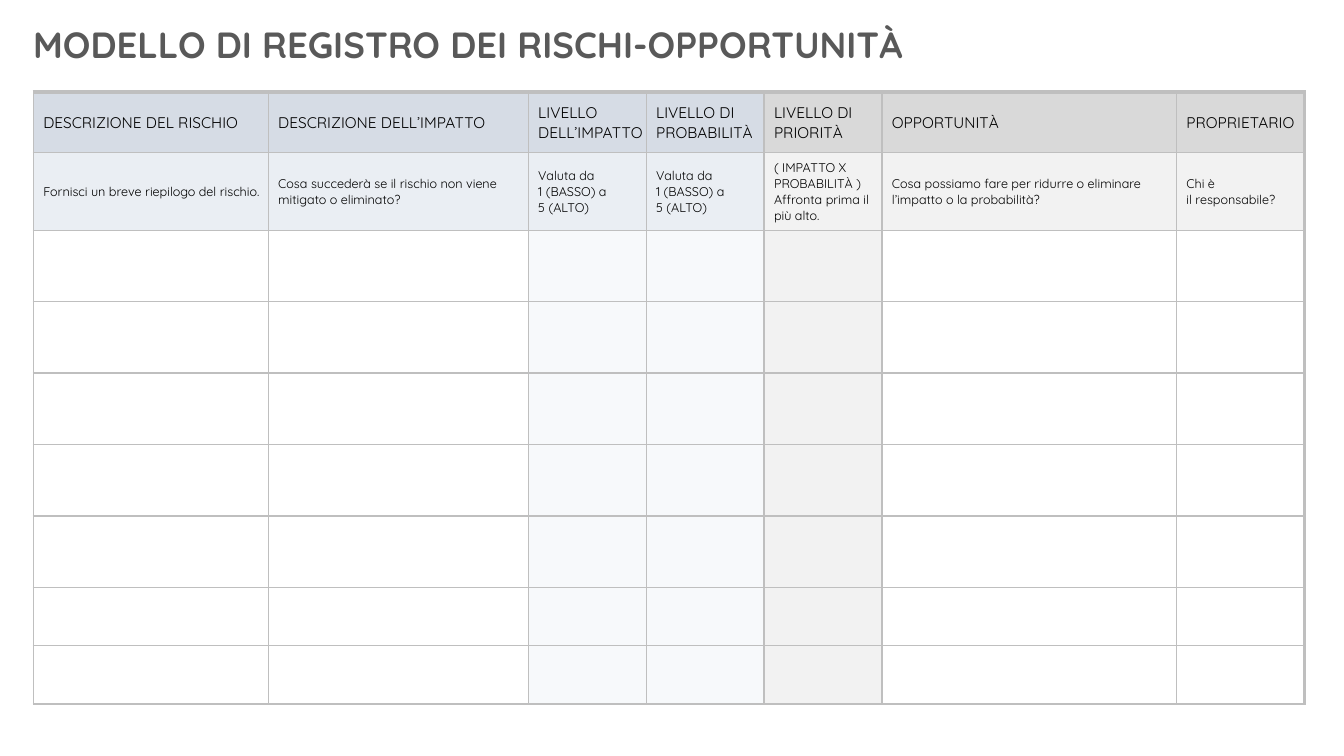
from dataclasses import dataclass

from lxml import etree
from pptx import Presentation
from pptx.dml.color import RGBColor
from pptx.enum.text import MSO_ANCHOR, MSO_AUTO_SIZE, PP_ALIGN
from pptx.oxml.ns import qn
from pptx.util import Cm, Pt

LEFT = PP_ALIGN.LEFT
TOP = MSO_ANCHOR.TOP
MIDDLE = MSO_ANCHOR.MIDDLE
NO_FIT = MSO_AUTO_SIZE.NONE
TITLE_ONLY = 5


@dataclass(frozen=True)
class Theme:
    font: str = "Quicksand"
    title_size: float = 26
    header_size: float = 11
    hint_size: float = 9
    title: str = "595959"
    text: str = "000000"
    border: str = "BFBFBF"
    risk: tuple = ("D6DCE5", "EAEEF3", "FFFFFF")
    score: tuple = ("D6DCE5", "EAEEF3", "F7F9FB")
    priority: tuple = ("D9D9D9", "F2F2F2", "F2F2F2")
    response: tuple = ("D9D9D9", "F2F2F2", "FFFFFF")
    thin: float = 1
    edge: float = 2.25
    top_edge: float = 3


THEME = Theme()

# Boxes in centimetres: left, top, width, height
TITLE_BOX = (0.58, 0.43, 31.7, 1.37)
TABLE_BOX = (0.84, 2.32, 32.03, 15.42)

# Columns: width, (header, hint), fills for header, hint and entry rows
RATING = "Valuta da\v1 (BASSO) a\v5 (ALTO)"
COLUMNS = [
    (5.92, ("DESCRIZIONE DEL RISCHIO",
            "Fornisci un breve riepilogo del rischio."), THEME.risk),
    (6.55, ("DESCRIZIONE DELL’IMPATTO",
            "Cosa succederà se il rischio non viene mitigato o eliminato?"), THEME.risk),
    (2.97, ("LIVELLO\vDELL’IMPATTO", RATING), THEME.score),
    (2.97, ("LIVELLO DI PROBABILITÀ", RATING), THEME.score),
    (2.97, ("LIVELLO DI PRIORITÀ",
            "( IMPATTO X\vPROBABILITÀ )\vAffronta prima il più alto."), THEME.priority),
    (7.42, ("OPPORTUNITÀ",
            "Cosa possiamo fare per ridurre o eliminare l’impatto o la probabilità?"),
     THEME.response),
    (3.23, ("PROPRIETARIO", "Chi è\nil responsabile?"), THEME.response),
]
ROW_HEIGHTS = [1.52, 1.96] + [1.8] * 5 + [1.47] * 2

CELL_FORMAT = {
    "vertical_anchor": MIDDLE,
    "margin_left": Cm(0.25),
    "margin_top": Cm(0.03),
    "margin_right": Cm(0.03),
    "margin_bottom": 0,
}
TITLE_FORMAT = {"word_wrap": True, "auto_size": NO_FIT, "vertical_anchor": TOP}


def apply_format(target, values):
    for name, value in values.items():
        setattr(target, name, value)


def style_text(text_frame, size, color, bold=False):
    for paragraph in text_frame.paragraphs:
        paragraph.alignment = LEFT
        for run in paragraph.runs:
            apply_format(run.font, {"name": THEME.font, "size": Pt(size), "bold": bold})
            run.font.color.rgb = RGBColor.from_string(color)


def set_borders(cell, widths):
    properties = cell._tc.get_or_add_tcPr()
    for side, width in widths.items():
        line = etree.SubElement(properties, qn(f"a:ln{side}"), w=str(Pt(width)))
        fill = etree.SubElement(line, qn("a:solidFill"))
        etree.SubElement(fill, qn("a:srgbClr"), val=THEME.border)


def add_title(slide, box):
    title = slide.shapes.title
    apply_format(title, dict(zip(("left", "top", "width", "height"), map(Cm, box))))
    title.text_frame.text = "MODELLO DI REGISTRO DEI RISCHI-OPPORTUNITÀ"
    apply_format(title.text_frame, TITLE_FORMAT)
    style_text(title.text_frame, THEME.title_size, THEME.title, bold=True)


def add_register(slide, box):
    row_count, column_count = len(ROW_HEIGHTS), len(COLUMNS)
    table = slide.shapes.add_table(row_count, column_count, *map(Cm, box)).table
    apply_format(table, {"first_row": False, "horz_banding": False})
    for row, height in zip(table.rows, ROW_HEIGHTS):
        row.height = Cm(height)

    for column_index, (width, texts, fills) in enumerate(COLUMNS):
        table.columns[column_index].width = Cm(width)
        last_column = column_index == column_count - 1
        for row_index in range(row_count):
            cell = table.cell(row_index, column_index)
            apply_format(cell, CELL_FORMAT)
            # Outer edges are heavier, except on the left
            set_borders(cell, {
                "L": THEME.thin,
                "R": THEME.edge if last_column else THEME.thin,
                "T": THEME.top_edge if row_index == 0 else THEME.thin,
                "B": THEME.edge if row_index == row_count - 1 else THEME.thin,
            })
            cell.fill.solid()
            cell.fill.fore_color.rgb = RGBColor.from_string(fills[min(row_index, 2)])
        # Header and hint texts
        for row_index, size in enumerate((THEME.header_size, THEME.hint_size)):
            text_frame = table.cell(row_index, column_index).text_frame
            text_frame.text = texts[row_index]
            style_text(text_frame, size, THEME.text)


def main():
    presentation = Presentation()
    presentation.slide_width = Cm(33.86)
    presentation.slide_height = Cm(19.05)
    slide = presentation.slides.add_slide(presentation.slide_layouts[TITLE_ONLY])
    add_title(slide, TITLE_BOX)
    add_register(slide, TABLE_BOX)
    presentation.save("out.pptx")


if __name__ == "__main__":
    main()
